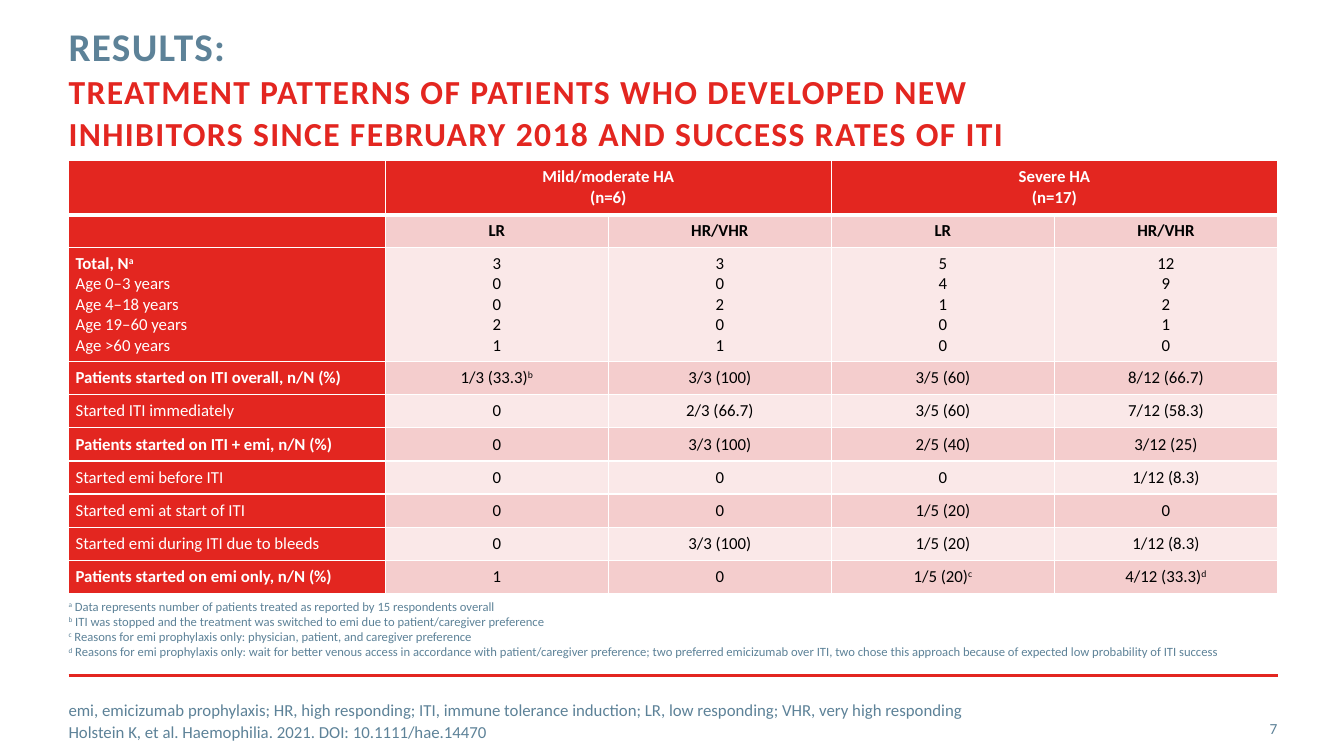
from dataclasses import dataclass

from lxml import etree
from pptx import Presentation
from pptx.dml.color import RGBColor
from pptx.enum.shapes import MSO_CONNECTOR
from pptx.enum.text import MSO_ANCHOR, PP_ALIGN
from pptx.oxml.ns import qn
from pptx.util import Inches, Pt

STRAIGHT = MSO_CONNECTOR.STRAIGHT
TOP, MIDDLE = MSO_ANCHOR.TOP, MSO_ANCHOR.MIDDLE
LEFT, CENTER, RIGHT = PP_ALIGN.LEFT, PP_ALIGN.CENTER, PP_ALIGN.RIGHT
WIDTH, HEIGHT = Inches(13.33), Inches(7.5)


@dataclass(frozen=True)
class Theme:
    font: str = "Calibri"
    red: str = "E32620"
    slate: str = "5D8298"
    white: str = "FFFFFF"
    black: str = "000000"
    dark_band: str = "F4CDCD"
    light_band: str = "FAE8E8"
    heading: int = 28
    subheading: int = 24
    body: int = 12
    page: int = 11
    note: int = 9


THEME = Theme()

MARGIN = 5.1
CONTENT_WIDTH = 89.95
LABEL_SHARE, VALUE_SHARE = 26.2, 18.45
HEADER_SHARE, AGES_SHARE, ROW_SHARE = 12.55, 26.25, 7.65

RESULT_ROWS = [
    ["", "Mild/moderate HA\v(n=6)", "", "Severe HA\v(n=17)", ""],
    ["", "LR", "HR/VHR", "LR", "HR/VHR"],
    ["*Total, N^a\nAge 0–3 years\nAge 4–18 years\nAge 19–60 years\nAge >60 years",
     "3\n0\n0\n2\n1", "3\n0\n2\n0\n1", "5\n4\n1\n0\n0", "12\n9\n2\n1\n0"],
    ["*Patients started on ITI overall, n/N (%)",
     "1/3 (33.3)^b", "3/3 (100)", "3/5 (60)", "8/12 (66.7)"],
    ["Started ITI immediately", "0", "2/3 (66.7)", "3/5 (60)", "7/12 (58.3)"],
    ["*Patients started on ITI + emi, n/N (%)",
     "0", "3/3 (100)", "2/5 (40)", "3/12 (25)"],
    ["Started emi before ITI", "0", "0", "0", "1/12 (8.3)"],
    ["Started emi at start of ITI", "0", "0", "1/5 (20)", "0"],
    ["Started emi during ITI due to bleeds",
     "0", "3/3 (100)", "1/5 (20)", "1/12 (8.3)"],
    ["*Patients started on emi only, n/N (%)",
     "1", "0", "1/5 (20)^c", "4/12 (33.3)^d"],
]

FOOTNOTES = [
    "^a^ Data represents number of patients treated as reported by 15 respondents overall\v"
    "^b^ ITI was stopped and the treatment was switched to emi due to patient/caregiver preference\v"
    "^c^ Reasons for emi prophylaxis only: physician, patient, and caregiver preference",
    "^d^ Reasons for emi prophylaxis only: wait for better venous access in accordance with "
    "patient/caregiver preference; two preferred emicizumab over ITI, two chose this approach "
    "because of expected low probability of ITI success",
]

REFERENCES = [
    "emi, emicizumab prophylaxis; HR, high responding; ITI, immune tolerance induction; "
    "LR, low responding; VHR, very high responding",
    "Holstein K, et al. Haemophilia. 2021. DOI: 10.1111/hae.14470",
]


def across(percent):
    return round(WIDTH * percent / 100)


def down(percent):
    return round(HEIGHT * percent / 100)


def style_font(font, size, color, bold=False):
    font.name = THEME.font
    font.size = Pt(size)
    font.bold = bold
    font.color.rgb = RGBColor.from_string(color)


def write_line(paragraph, line, size, color, bold=False, align=LEFT):
    paragraph.alignment = align
    style_font(paragraph.font, size, color, bold)
    for row, segment in enumerate(line.split("\v")):
        if row:
            paragraph.add_line_break()
        for position, piece in enumerate(segment.split("^")):
            if piece:
                run = paragraph.add_run()
                run.text = piece
                if position % 2:
                    run.font._element.set("baseline", "30000")


def add_text_area(slide, left, top, width, height, anchor=TOP):
    area = slide.shapes.add_textbox(across(left), down(top), across(width), down(height))
    frame = area.text_frame
    frame.word_wrap = True
    frame.vertical_anchor = anchor
    frame.margin_left = frame.margin_right = frame.margin_top = frame.margin_bottom = 0
    return frame


def add_lines(frame, lines, size, align=LEFT):
    for index, line in enumerate(lines):
        paragraph = frame.add_paragraph() if index else frame.paragraphs[0]
        write_line(paragraph, line, size, THEME.slate, align=align)


def add_title(slide):
    paragraph = add_text_area(slide, MARGIN, 3.6, 74.1, 11.73).paragraphs[0]
    paragraph.line_spacing = Pt(30)
    topic = paragraph.add_run()
    topic.text = "RESULTS:"
    paragraph.add_line_break()
    finding = paragraph.add_run()
    finding.text = ("TREATMENT PATTERNS OF PATIENTS WHO DEVELOPED NEW INHIBITORS "
                    "SINCE FEBRUARY 2018 AND SUCCESS RATES OF ITI")
    style_font(topic.font, THEME.heading, THEME.slate, True)
    style_font(finding.font, THEME.subheading, THEME.red, True)
    for run in (topic, finding):
        run.font._element.set("spc", "100")


def add_borders(cell, row):
    properties = cell._tc.get_or_add_tcPr()
    widths = {"L": 1, "R": 1, "T": 3 if row == 1 else 1, "B": 3 if row == 0 else 1}
    for index, (side, width) in enumerate(widths.items()):
        border = etree.Element(qn(f"a:ln{side}"), w=str(Pt(width)))
        fill = etree.SubElement(border, qn("a:solidFill"))
        etree.SubElement(fill, qn("a:srgbClr"), val=THEME.white)
        properties.insert(index, border)


def fill_cell(cell, content, row, column):
    is_red = row == 0 or column == 0
    band = THEME.dark_band if row % 2 else THEME.light_band
    cell.fill.solid()
    cell.fill.fore_color.rgb = RGBColor.from_string(THEME.red if is_red else band)
    add_borders(cell, row)
    cell.vertical_anchor = MIDDLE
    cell.margin_left = cell.margin_right = Inches(0.07)
    cell.margin_top = cell.margin_bottom = 0
    for index, line in enumerate(content.split("\n")):
        paragraph = cell.text_frame.add_paragraph() if index else cell.text_frame.paragraphs[0]
        write_line(paragraph, line.removeprefix("*"), THEME.body,
                   THEME.white if is_red else THEME.black,
                   row < 2 or line.startswith("*"), CENTER if column else LEFT)


def add_results_table(slide):
    width, height = across(CONTENT_WIDTH), down(57.33)
    table = slide.shapes.add_table(len(RESULT_ROWS), len(RESULT_ROWS[0]), across(MARGIN),
                                   down(21.2), width, height).table
    table.first_row = table.horz_banding = False
    for index, column in enumerate(table.columns):
        column.width = round(width * (VALUE_SHARE if index else LABEL_SHARE) / 100)
    special_rows = {0: HEADER_SHARE, 2: AGES_SHARE}
    for index, row in enumerate(table.rows):
        row.height = round(height * special_rows.get(index, ROW_SHARE) / 100)
    for row, contents in enumerate(RESULT_ROWS):
        for column, content in enumerate(contents):
            fill_cell(table.cell(row, column), content, row, column)
    for column in (1, 3):
        table.cell(0, column).merge(table.cell(0, column + 1))


def add_footer_rule(slide):
    rule = slide.shapes.add_connector(STRAIGHT, across(MARGIN), down(89.33),
                                      across(95.1), down(89.33))
    rule.line.color.rgb = RGBColor.from_string(THEME.red)
    rule.line.width = Pt(2)
    etree.SubElement(rule._element.spPr, qn("a:effectLst"))


def add_footnotes(slide):
    frame = add_text_area(slide, MARGIN, 79.2, CONTENT_WIDTH, 6.13)
    add_lines(frame, FOOTNOTES, THEME.note)
    hanging = frame.paragraphs[-1]._p.get_or_add_pPr()
    hanging.set("marL", str(Inches(0.1)))
    hanging.set("indent", str(Inches(-0.1)))


def add_references(slide):
    frame = add_text_area(slide, MARGIN, 92.67, 85.9, 5.33, MIDDLE)
    add_lines(frame, REFERENCES, THEME.body)
    for paragraph in frame.paragraphs:
        paragraph.space_after = Pt(1)


def main():
    deck = Presentation()
    deck.slide_width, deck.slide_height = WIDTH, HEIGHT
    slide = deck.slides.add_slide(deck.slide_layouts[6])
    add_footer_rule(slide)
    add_title(slide)
    add_lines(add_text_area(slide, 88.6, 93.73, 6.45, 5.33, MIDDLE), ["7"], THEME.page, RIGHT)
    add_references(slide)
    add_results_table(slide)
    add_footnotes(slide)
    deck.save("out.pptx")


if __name__ == "__main__":
    main()
